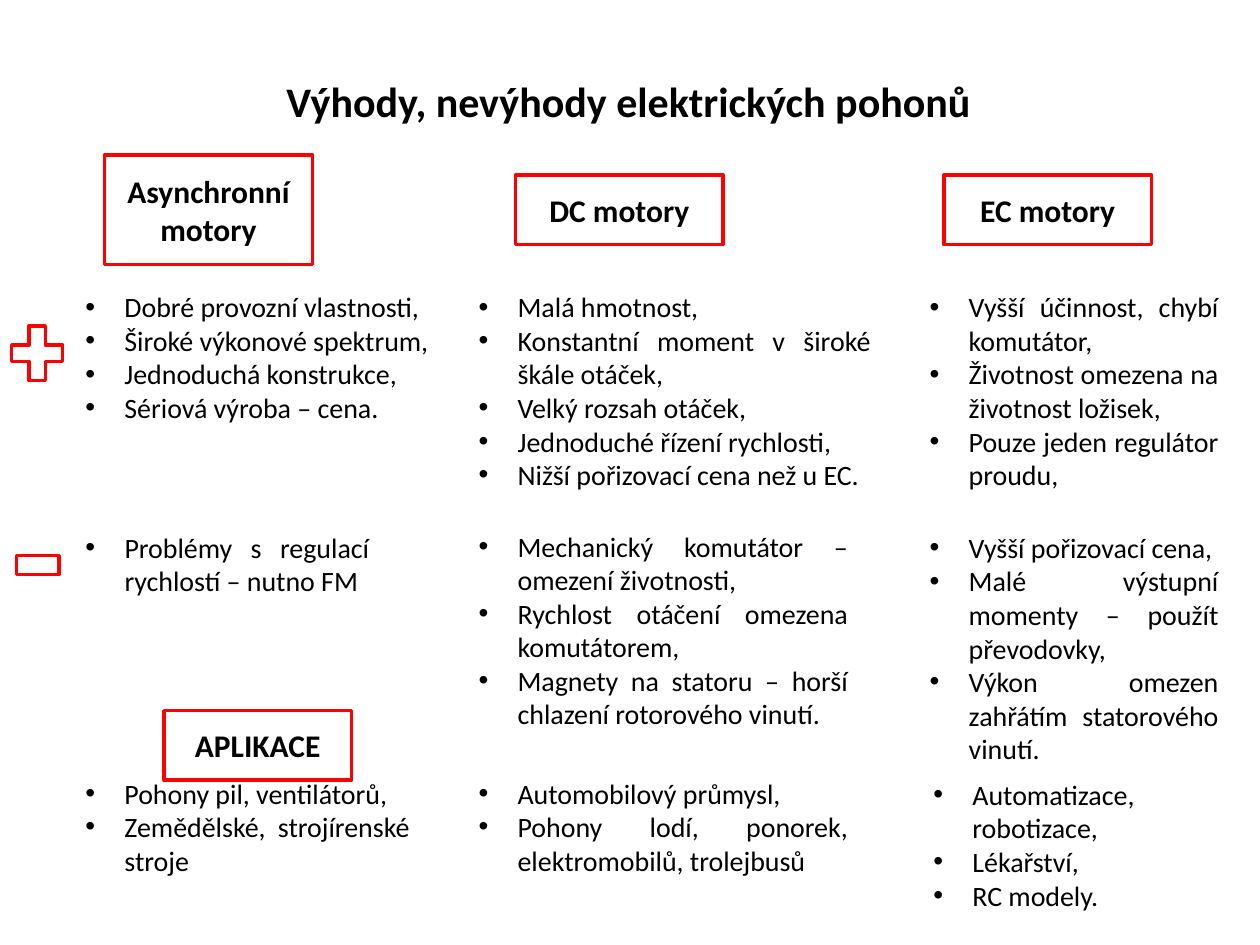
from lxml import etree
from pptx import Presentation
from pptx.dml.color import RGBColor
from pptx.enum.shapes import MSO_SHAPE
from pptx.enum.text import MSO_ANCHOR, PP_ALIGN
from pptx.oxml.ns import qn
from pptx.util import Inches, Pt

RECT = MSO_SHAPE.RECTANGLE
PLUS = MSO_SHAPE.MATH_PLUS
MINUS = MSO_SHAPE.MATH_MINUS
CENTER = PP_ALIGN.CENTER
JUSTIFY = PP_ALIGN.JUSTIFY
MIDDLE = MSO_ANCHOR.MIDDLE


def color(hex_code):
    return RGBColor.from_string(hex_code)


class SlideBuilder:
    FONT = "Calibri"
    TEXT = "000000"
    ACCENT = "FF0000"
    LINE = Pt(2)
    INDENT = Inches(0.31)

    def __init__(self, slide):
        self.s = slide

    def style(self, p, size, align, bold=False):
        p.alignment = align
        p.font.name = self.FONT
        p.font.size = Pt(size)
        p.font.bold = bold
        p.font.color.rgb = color(self.TEXT)

    def text_box(self, x, y, w, h):
        sp = self.s.shapes.add_textbox(Inches(x), Inches(y), Inches(w), Inches(h))
        sp.text_frame.word_wrap = True
        return sp.text_frame

    def title(self, text, x, y, w, h):
        tf = self.text_box(x, y, w, h)
        tf.vertical_anchor = MIDDLE
        tf.text = text
        self.style(tf.paragraphs[0], 24, CENTER, bold=True)

    def outline(self, kind, x, y, w, h):
        sp = self.s.shapes.add_shape(kind, Inches(x), Inches(y), Inches(w), Inches(h))
        sp.shadow.inherit = False
        sp.fill.background()
        sp.line.color.rgb = color(self.ACCENT)
        sp.line.width = self.LINE
        return sp

    def heading(self, text, x, y, w, h):
        tf = self.outline(RECT, x, y, w, h).text_frame
        tf.word_wrap = True
        tf.vertical_anchor = MIDDLE
        tf.text = text
        self.style(tf.paragraphs[0], 18, CENTER, bold=True)

    def bullets(self, items, x, y, w, h):
        tf = self.text_box(x, y, w, h)
        tf.text = "\n".join(items)
        for p in tf.paragraphs:
            self.style(p, 16, JUSTIFY)
            pPr = p._p.get_or_add_pPr()
            pPr.set("marL", str(self.INDENT))
            pPr.set("indent", str(-self.INDENT))
            bullet_font = etree.Element(qn("a:buFont"), typeface="Arial")
            bullet = etree.Element(qn("a:buChar"), char="•")
            pPr.insert(0, bullet_font)
            pPr.insert(1, bullet)


HEADINGS = [
    ("Asynchronní motory", 0.83, 1.23, 1.65, 0.87),
    ("DC motory", 4.09, 1.39, 1.65, 0.55),
    ("EC motory", 7.49, 1.39, 1.65, 0.55),
    ("APLIKACE", 1.3, 5.64, 1.49, 0.55),
]

# Each list: items, left, top, width, height
ADVANTAGES = [
    (["Dobré provozní vlastnosti,", "Široké výkonové spektrum,",
      "Jednoduchá konstrukce,", "Sériová výroba – cena."], 0.58, 2.25, 3, 1.18),
    (["Malá hmotnost,", "Konstantní moment v široké škále otáček,",
      "Velký rozsah otáček,", "Jednoduché řízení rychlosti,",
      "Nižší pořizovací cena než u EC."], 3.7, 2.25, 3.31, 1.72),
    (["Vyšší účinnost, chybí komutátor,",
      "Životnost omezena na životnost ložisek,",
      "Pouze jeden regulátor proudu,"], 7.28, 2.25, 2.49, 1.99),
]
DISADVANTAGES = [
    (["Problémy s regulací rychlostí – nutno FM"], 0.58, 4.16, 2.45, 0.64),
    (["Mechanický komutátor – omezení životnosti,",
      "Rychlost otáčení omezena komutátorem,",
      "Magnety na statoru – horší chlazení rotorového vinutí."],
     3.7, 4.15, 3.13, 1.72),
    (["Vyšší pořizovací cena,", "Malé výstupní momenty – použít převodovky,",
      "Výkon omezen zahřátím statorového vinutí."], 7.28, 4.16, 2.49, 2.26),
]
APPLICATIONS = [
    (["Pohony pil, ventilátorů,", "Zemědělské, strojírenské stroje"],
     0.58, 6.11, 2.77, 0.91),
    (["Automobilový průmysl,",
      "Pohony lodí, ponorek, elektromobilů, trolejbusů"], 3.7, 6.11, 3.13, 0.91),
    (["Automatizace, robotizace,", "Lékařství,", "RC modely."],
     7.31, 6.12, 2.26, 1.18),
]


def main():
    prs = Presentation()
    prs.slide_width, prs.slide_height = Inches(10), Inches(7.5)
    b = SlideBuilder(prs.slides.add_slide(prs.slide_layouts[6]))

    # Title and framed headings
    b.title("Výhody, nevýhody elektrických pohonů", 0.66, 0.52, 8.66, 0.55)
    for heading in HEADINGS:
        b.heading(*heading)

    # Bullet lists, row by row
    for block in ADVANTAGES + DISADVANTAGES + APPLICATIONS:
        b.bullets(*block)

    # Row signs
    b.outline(PLUS, 0.02, 2.51, 0.55, 0.59)
    b.outline(MINUS, 0.07, 4.17, 0.46, 0.63)

    prs.save("out.pptx")


if __name__ == "__main__":
    main()
